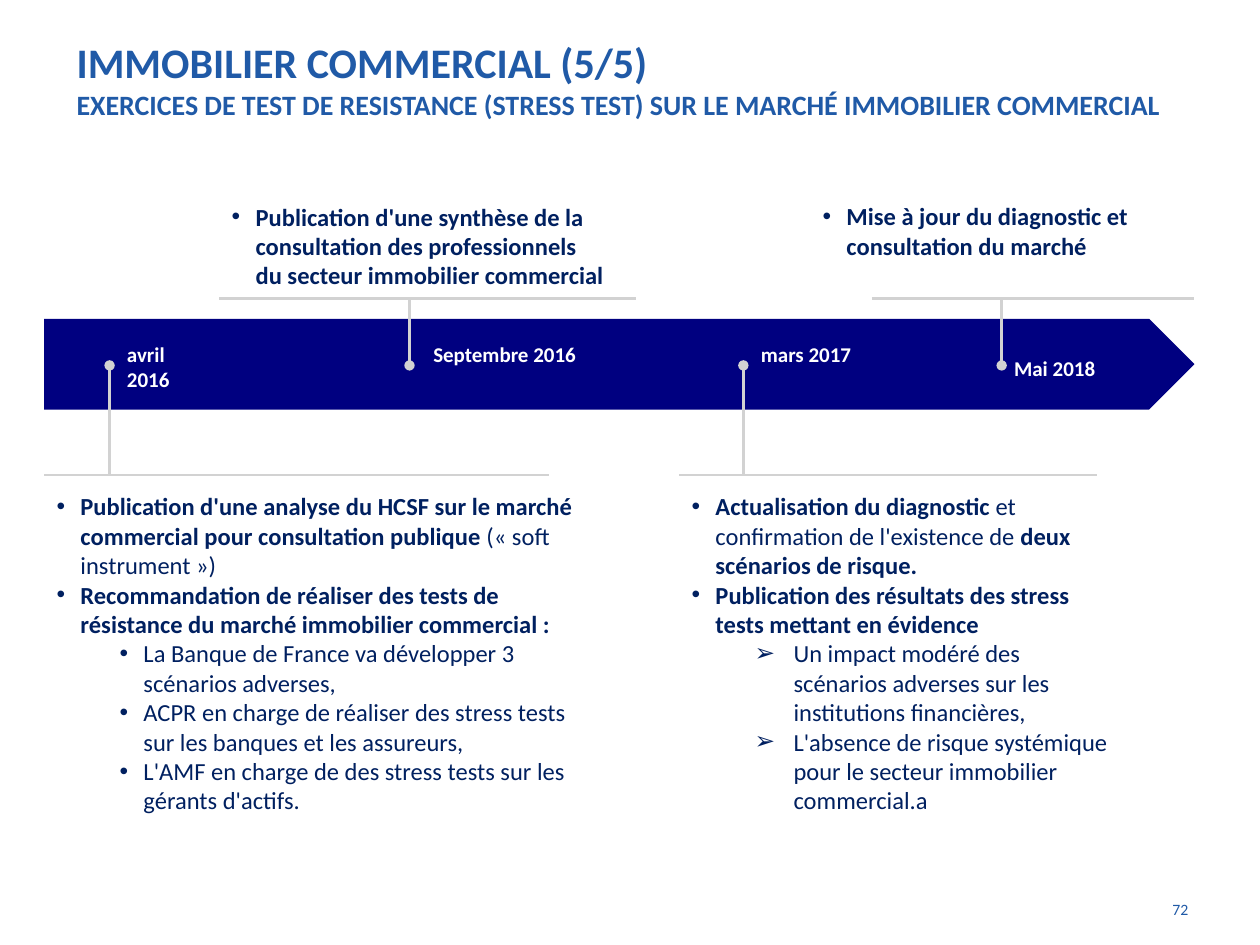
from lxml import etree
from pptx import Presentation
from pptx.dml.color import RGBColor
from pptx.enum import shapes, text
from pptx.oxml import ns
from pptx.util import Inches, Pt

COLORS = {"title": "205AA7", "arrow": "000080", "line": "D2D2D2",
          "body": "002060", "date": "FFFFFF"}
FONT = "Calibri"
# Bullet styles: level, character, left margin, hanging indent
BULLETS = {"main": (0, "•", 0.19, 0.19),
           "sub": (1, "•", 0.69, 0.19),
           "arrow": (1, "➢", 0.81, 0.31)}


def color(name):
    return RGBColor.from_string(COLORS[name])


def add_run(paragraph, content, size, fill, bold):
    run = paragraph.add_run()
    run.text = content
    run.font.name, run.font.size, run.font.bold = FONT, Pt(size), bold
    run.font.color.rgb = color(fill)


def set_bullet(paragraph, style):
    level, character, margin, hanging = BULLETS[style]
    paragraph.level = level
    properties = paragraph._p.get_or_add_pPr()
    properties.set("marL", str(Inches(margin)))
    properties.set("indent", str(-Inches(hanging)))
    font = etree.SubElement(properties, ns.qn("a:buFont"))
    font.set("typeface", "Arial")
    bullet = etree.SubElement(properties, ns.qn("a:buChar"))
    bullet.set("char", character)


def add_text(slide, box, paragraphs, size=14, fill="body", bold=False,
             align=text.PP_ALIGN.LEFT, anchor=text.MSO_ANCHOR.TOP):
    """Each paragraph is (bullet style or None, text); ** switches bold."""
    shape = slide.shapes.add_textbox(*map(Inches, box))
    frame = shape.text_frame
    frame.word_wrap, frame.vertical_anchor = True, anchor
    for index, (style, content) in enumerate(paragraphs):
        paragraph = frame.add_paragraph() if index else frame.paragraphs[0]
        paragraph.alignment = align
        if style:
            set_bullet(paragraph, style)
        for part, piece in enumerate(content.split("**")):
            if piece:
                add_run(paragraph, piece, size, fill, bold or part % 2 == 1)
    return shape


def add_line(slide, start, end, dot=False):
    line = slide.shapes.add_connector(
        shapes.MSO_CONNECTOR.STRAIGHT, *map(Inches, (*start, *end)))
    line.line.color.rgb = color("line")
    line.line.width = Pt(1.5)
    if dot:
        head = etree.SubElement(line.line._get_or_add_ln(), ns.qn("a:headEnd"))
        head.set("type", "oval")
    etree.SubElement(line._element.spPr, ns.qn("a:effectLst"))


def add_title(slide, box, heading, subheading):
    shape = add_text(slide, box, [(None, heading)], size=24, fill="title",
                     bold=True, anchor=text.MSO_ANCHOR.MIDDLE)
    paragraph = shape.text_frame.paragraphs[0]
    paragraph.add_line_break()
    add_run(paragraph, subheading, 16, "title", True)


def add_band(slide, box):
    band = slide.shapes.add_shape(shapes.MSO_SHAPE.PENTAGON, *map(Inches, box))
    band.shadow.inherit = False
    band.fill.solid()
    band.fill.fore_color.rgb = color("arrow")
    band.line.fill.background()


def add_milestone(slide, band, x, above, rule, date, date_box, body_box, body):
    """Dot inside the band, stem to a horizontal rule, date and description."""
    left, top, _, height = band
    dot_y = top + 0.37
    rule_y = top - 0.16 if above else top + height + 0.52
    add_line(slide, (left + x, dot_y), (left + x, rule_y), dot=True)
    add_line(slide, (left + rule[0], rule_y), (left + rule[1], rule_y))
    date_x, date_y, date_width, date_height = date_box
    add_text(slide, (left + date_x, top + date_y, date_width, date_height),
             [(None, date)], size=12, fill="date", bold=True)
    body_x, body_width, body_height = body_box
    body_y = rule_y - 0.82 if above else rule_y + 0.08
    add_text(slide, (left + body_x, body_y, body_width, body_height), body)


def add_timeline(slide, band):
    add_band(slide, band)
    add_milestone(
        slide, band, 0.52, False, (0, 4.01), "avril 2016",
        (0.56, 0.13, 0.77, 0.5), (0, 4.39, 2.69),
        [("main", "**Publication d'une analyse du HCSF sur le marché commercial "
                  "pour consultation publique **(« soft instrument »)"),
         ("main", "**Recommandation de réaliser des tests de résistance du "
                  "marché immobilier commercial :**"),
         ("sub", "La Banque de France va développer 3 scénarios adverses,"),
         ("sub", "ACPR en charge de réaliser des stress tests sur les banques "
                 "et les assureurs,"),
         ("sub", "L'AMF en charge de des stress tests sur les gérants "
                 "d'actifs.")])
    add_milestone(
        slide, band, 2.9, True, (1.39, 4.7), "Septembre 2016",
        (2.99, 0.13, 1.41, 0.3), (1.39, 3.18, 0.81),
        [("main", "**Publication d'une synthèse de la consultation des "
                  "professionnels du secteur immobilier commercial**")])
    add_milestone(
        slide, band, 5.55, False, (5.04, 8.36), "mars 2017",
        (5.59, 0.13, 0.98, 0.5), (5.04, 3.54, 2.69),
        [("main", "**Actualisation du diagnostic **et confirmation de "
                  "l'existence de **deux scénarios de risque.**"),
         ("main", "**Publication des résultats des stress tests mettant en "
                  "évidence**"),
         ("arrow", "Un impact modéré des scénarios adverses sur les "
                   "institutions financières,"),
         ("arrow", "L'absence de risque systémique pour le secteur immobilier "
                   "commercial.a")])
    add_milestone(
        slide, band, 7.6, True, (6.57, 9.13), "Mai 2018",
        (7.6, 0.24, 0.98, 0.3), (6.08, 3.14, 0.57),
        [("main", "**Mise à jour du diagnostic et consultation du marché**")])


def main():
    presentation = Presentation()
    presentation.slide_width, presentation.slide_height = Inches(10), Inches(7.5)
    slide = presentation.slides.add_slide(presentation.slide_layouts[6])
    add_title(slide, (0.51, 0, 9, 1.25), "IMMOBILIER COMMERCIAL (5/5)",
              "EXERCICES DE TEST DE RESISTANCE (STRESS TEST) SUR LE MARCHÉ "
              "IMMOBILIER COMMERCIAL")
    add_timeline(slide, (0.35, 2.53, 9.13, 0.72))
    # Page number
    add_text(slide, (8.94, 7.09, 0.59, 0.39), [(None, "72")], size=9,
             fill="title", align=text.PP_ALIGN.RIGHT)
    presentation.save("out.pptx")


if __name__ == "__main__":
    main()
